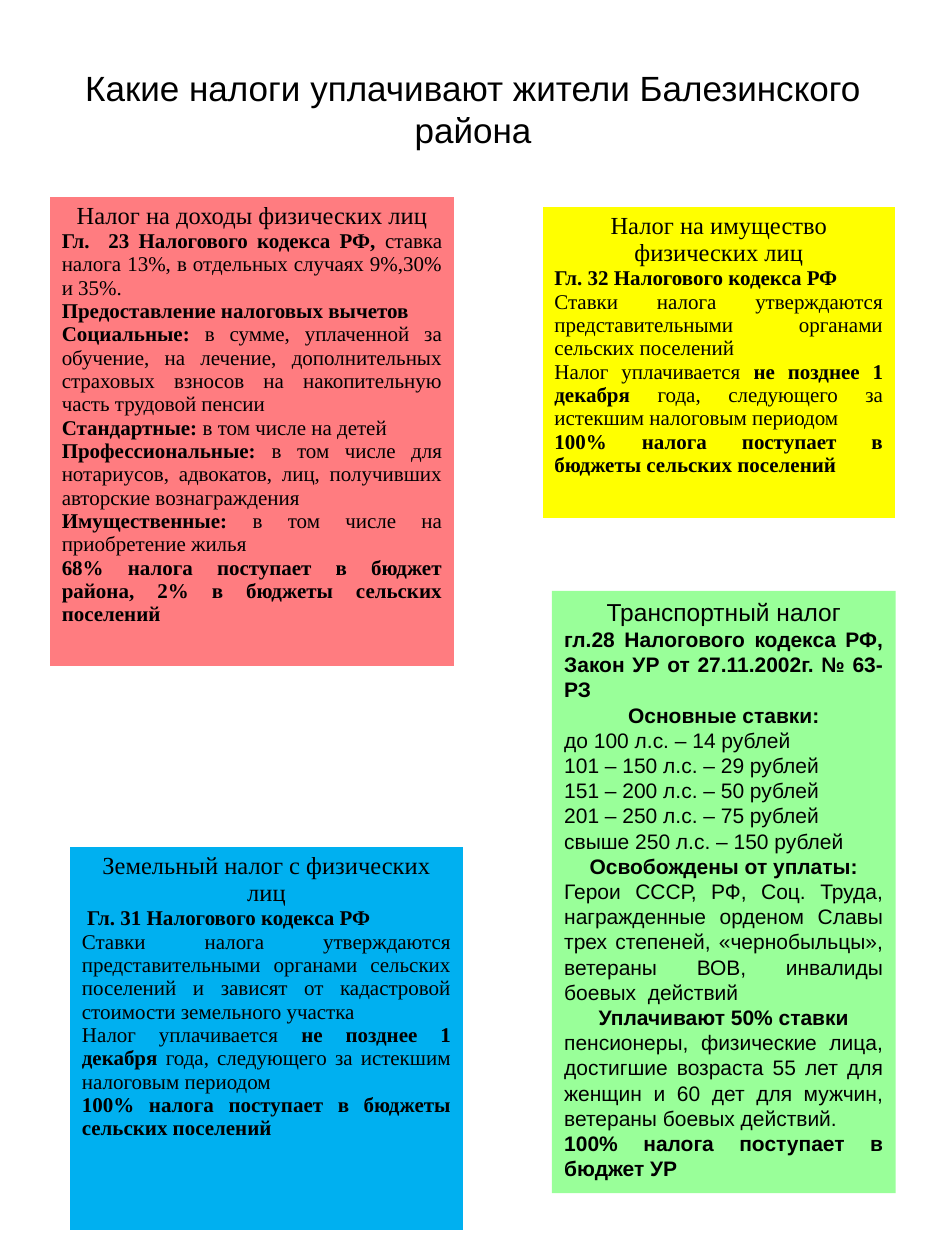
from pptx import Presentation
from pptx.dml.color import RGBColor
from pptx.enum.shapes import MSO_SHAPE
from pptx.enum.text import MSO_ANCHOR, PP_ALIGN
from pptx.util import Inches, Pt

CENTER, JUSTIFY = PP_ALIGN.CENTER, PP_ALIGN.JUSTIFY
MIDDLE, TOP = MSO_ANCHOR.MIDDLE, MSO_ANCHOR.TOP
RECTANGLE = MSO_SHAPE.RECTANGLE

SANS, SERIF = "Arial", "Times New Roman"
BLACK = "000000"
SANS_LEADING = 1.2

# In all texts, asterisks enclose bold passages.
DEADLINE = ("Налог уплачивается *не позднее 1 декабря* года, следующего "
            "за истекшим налоговым периодом")
VILLAGE_SHARE = "*100% налога поступает в бюджеты сельских поселений*"
RATES_SET_BY = "Ставки налога утверждаются представительными органами сельских поселений"

# Position and size in inches, fill, heading, body paragraphs.
TAX_TABLES = [
    ((0.39, 1.56, 3.22, 3.65), "FF7C80", "Налог на доходы физических лиц", [
        "*Гл.  23 Налогового кодекса РФ,* ставка налога 13%, "
        "в отдельных случаях 9%,30% и 35%.",
        "*Предоставление налоговых вычетов*",
        "*Социальные:* в сумме, уплаченной за обучение, на лечение, дополнительных "
        "страховых взносов на накопительную часть трудовой пенсии",
        "*Стандартные:* в том числе на детей",
        "*Профессиональные:* в том числе для нотариусов, адвокатов, лиц, "
        "получивших авторские вознаграждения",
        "*Имущественные:* в том числе на приобретение жилья",
        "*68% налога поступает в бюджет района, 2% в бюджеты сельских поселений*",
    ]),
    ((4.3, 1.64, 2.81, 2.48), "FFFF00", "Налог на имущество физических лиц", [
        "*Гл. 32 Налогового кодекса РФ*",
        RATES_SET_BY,
        DEADLINE,
        VILLAGE_SHARE,
    ]),
    ((0.55, 6.72, 3.13, 3.05), "00B0F0", "Земельный налог с физических лиц", [
        " *Гл. 31 Налогового кодекса РФ*",
        RATES_SET_BY + " и зависят от кадастровой стоимости земельного участка",
        DEADLINE,
        VILLAGE_SHARE,
    ]),
]

TRANSPORT_TAX = [
    (CENTER, 14, "Транспортный налог"),
    (JUSTIFY, 12, "*гл.28 Налогового кодекса РФ, Закон УР от 27.11.2002г. № 63-РЗ*"),
    (CENTER, 12, "*Основные ставки:*"),
    (JUSTIFY, 12, "до 100 л.с. – 14 рублей"),
    (JUSTIFY, 12, "101 – 150 л.с. – 29 рублей"),
    (JUSTIFY, 12, "151 – 200 л.с. – 50 рублей"),
    (JUSTIFY, 12, "201 – 250 л.с. – 75 рублей"),
    (JUSTIFY, 12, "свыше 250 л.с. – 150 рублей"),
    (CENTER, 12, "*Освобождены от уплаты:*"),
    (JUSTIFY, 12, "Герои СССР, РФ, Соц. Труда, награжденные орденом Славы трех степеней, "
                  "«чернобыльцы», ветераны ВОВ, инвалиды боевых  действий"),
    (CENTER, 12, "*Уплачивают 50% ставки*"),
    (JUSTIFY, 12, "пенсионеры, физические лица, достигшие возраста 55 лет для женщин "
                  "и 60 дет для мужчин, ветераны боевых действий."),
    (JUSTIFY, 12, "*100% налога поступает в бюджет УР*"),
]


def rgb(color):
    return RGBColor.from_string(color)


def fill_solid(part, color):
    part.fill.solid()
    part.fill.fore_color.rgb = rgb(color)


def inches(box):
    return [Inches(length) for length in box]


def write(frame, lines, font_name, leading=None):
    """Fill a text frame with (alignment, size, text) lines."""
    frame.word_wrap = True
    for index, (alignment, size, text) in enumerate(lines):
        paragraph = frame.add_paragraph() if index else frame.paragraphs[0]
        paragraph.alignment = alignment
        if leading:
            paragraph.line_spacing = Pt(size * leading)
        paragraph.font.name = font_name
        paragraph.font.size = Pt(size)
        paragraph.font.color.rgb = rgb(BLACK)
        for position, passage in enumerate(text.split("*")):
            if passage:
                run = paragraph.add_run()
                run.text = passage
                run.font.bold = position % 2 == 1


def add_title(slide, box, text):
    frame = slide.shapes.add_textbox(*inches(box)).text_frame
    frame.vertical_anchor = MIDDLE
    write(frame, [(CENTER, 20, text)], SANS, SANS_LEADING)


def add_tax_table(slide, box, color, heading, body):
    cell = slide.shapes.add_table(1, 1, *inches(box)).table.cell(0, 0)
    fill_solid(cell, color)
    lines = [(CENTER, 14, heading)] + [(JUSTIFY, 12, text) for text in body]
    write(cell.text_frame, lines, SERIF)


def add_tax_panel(slide, box, color, lines):
    panel = slide.shapes.add_shape(RECTANGLE, *inches(box))
    panel.shadow.inherit = False
    fill_solid(panel, color)
    panel.line.fill.background()
    panel.text_frame.vertical_anchor = TOP
    write(panel.text_frame, lines, SANS, SANS_LEADING)


def main():
    presentation = Presentation()
    presentation.slide_width = Inches(7.5)
    presentation.slide_height = Inches(10)
    slide = presentation.slides.add_slide(presentation.slide_layouts[6])

    add_title(slide, (0.38, 0.4, 6.75, 0.93),
              "Какие налоги уплачивают жители Балезинского района")
    for tax in TAX_TABLES:
        add_tax_table(slide, *tax)
    add_tax_panel(slide, (4.38, 4.69, 2.73, 4.78), "99FF99", TRANSPORT_TAX)

    presentation.save("out.pptx")


if __name__ == "__main__":
    main()
